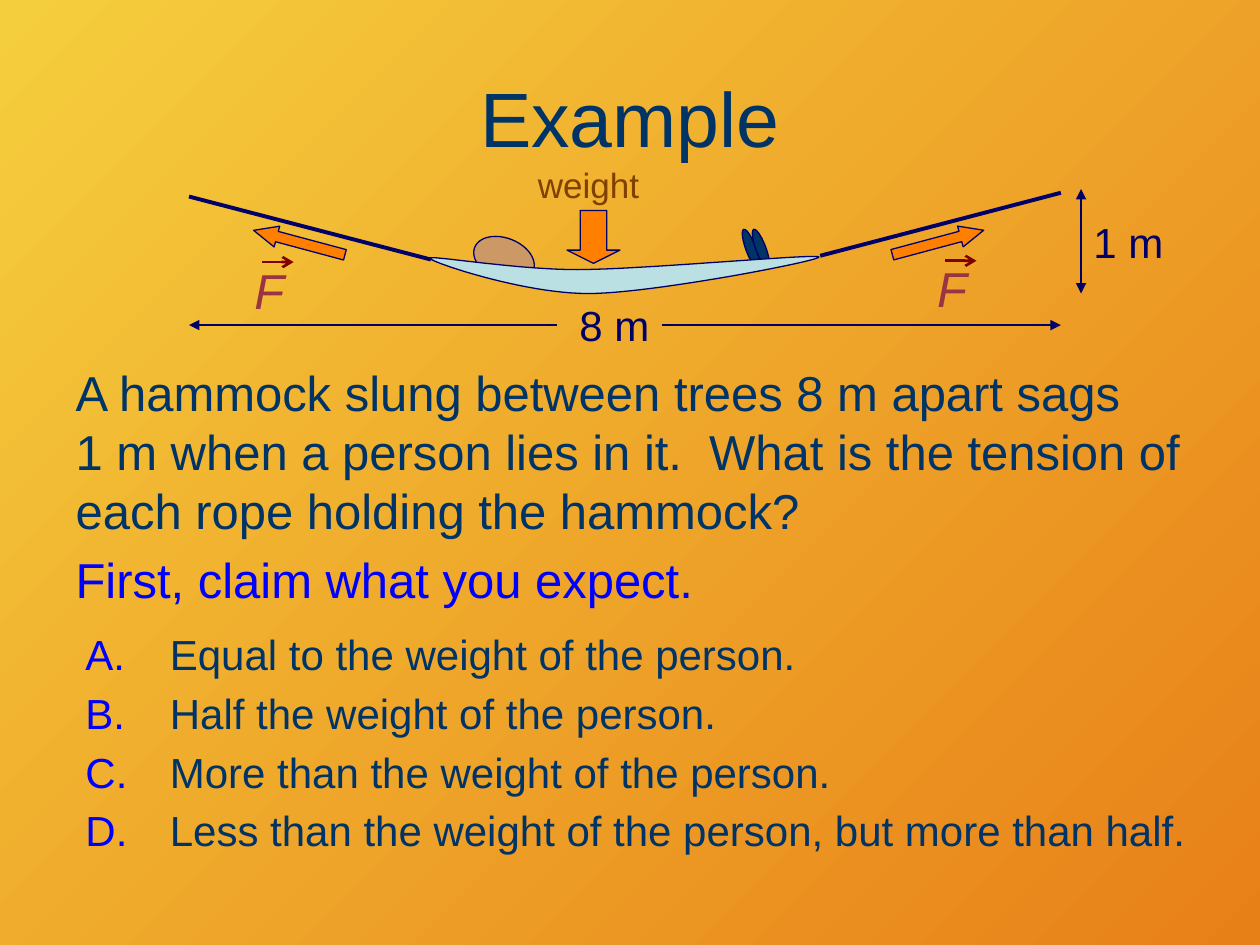
from lxml import etree
from pptx import Presentation
from pptx import util as u
from pptx.dml import color as dml
from pptx.enum import shapes, text
from pptx.oxml import ns

Inches, Pt = u.Inches, u.Pt
NO_BREAK_SPACE = chr(160)
COLORS = {
    "sun": "F5CE3D", "dusk": "E88018", "text": "003366", "prompt": "0000FF",
    "navy": "000066", "head": "CC9966", "cloth": "BBE0E3", "force": "FF8000",
    "weight": "804000", "symbol": "9A3344", "vector": "800000",
}


def rgb(name):
    return dml.RGBColor.from_string(COLORS[name])


def add_xml(parent, tag, **attributes):
    return etree.SubElement(parent, ns.qn(tag), attributes)


def bezier(start, control_1, control_2, end, steps=24):
    for step in range(1, steps + 1):
        t = step / steps
        weights = ((1 - t) ** 3, 3 * t * (1 - t) ** 2, 3 * t * t * (1 - t), t ** 3)
        points = (start, control_1, control_2, end)
        yield tuple(sum(w * p[axis] for w, p in zip(weights, points)) for axis in (0, 1))


class SlideBuilder:
    font = "Arial"
    outline = 0.75

    def __init__(self, slide):
        self.slide = slide

    def background(self, start, end):
        fill = self.slide.background.fill
        fill.gradient()
        fill.gradient_angle = 315
        for stop, name, position in zip(fill.gradient_stops, (start, end), (0, 1)):
            stop.color.rgb = rgb(name)
            stop.position = position

    def run(self, paragraph, words, size, color, italic=False):
        run = paragraph.add_run()
        run.text = words
        run.font.name = self.font
        run.font.size = Pt(size)
        run.font.italic = italic
        run.font.color.rgb = rgb(color)

    def paragraphs(self, frame, items, size):
        for index, (words, color) in enumerate(items):
            paragraph = frame.add_paragraph() if index else frame.paragraphs[0]
            self.run(paragraph, words, size, color)
            yield paragraph

    def placeholder(self, index, box, items, size, anchor, align):
        shape = self.slide.placeholders[index]
        shape.left, shape.top, shape.width, shape.height = map(Inches, box)
        frame = shape.text_frame
        frame.auto_size = text.MSO_AUTO_SIZE.NONE
        frame.vertical_anchor = anchor
        for paragraph in self.paragraphs(frame, items, size):
            paragraph.alignment = align
            properties = paragraph._p.get_or_add_pPr()
            properties.set("marL", "0")
            properties.set("indent", "0")
            add_xml(properties, "a:buNone")

    def answers(self, box, items, size):
        frame = self.slide.shapes.add_textbox(*map(Inches, box)).text_frame
        frame.word_wrap = True
        for paragraph in self.paragraphs(frame, items, size):
            paragraph.space_before = Pt(size * 0.2)
            properties = paragraph._p.get_or_add_pPr()
            properties.set("marL", str(Inches(0.67)))
            properties.set("indent", str(Inches(-0.67)))
            bullet_color = add_xml(properties, "a:buClr")
            add_xml(bullet_color, "a:srgbClr", val=COLORS["prompt"])
            add_xml(properties, "a:buAutoNum", type="alphaUcPeriod")

    def label(self, box, words, size, color, italic=False):
        frame = self.slide.shapes.add_textbox(*map(Inches, box)).text_frame
        frame.word_wrap = False
        frame.auto_size = text.MSO_AUTO_SIZE.SHAPE_TO_FIT_TEXT
        self.run(frame.paragraphs[0], words, size, color, italic)

    def paint(self, shape, fill):
        shape.shadow.inherit = False
        shape.fill.solid()
        shape.fill.fore_color.rgb = rgb(fill)
        shape.line.color.rgb = rgb("navy")
        shape.line.width = Pt(self.outline)

    def shape(self, kind, box, fill, rotation=0, adjustments=()):
        shape = self.slide.shapes.add_shape(kind, *map(Inches, box))
        shape.rotation = rotation
        for index, value in enumerate(adjustments):
            shape.adjustments[index] = value
        self.paint(shape, fill)

    def curved_shape(self, start, curves, fill):
        points = []
        current = start
        for curve in curves:
            points.extend(tuple(map(Inches, point)) for point in bezier(current, *curve))
            current = curve[-1]
        builder = self.slide.shapes.build_freeform(*map(Inches, start))
        builder.add_line_segments(points, close=True)
        self.paint(builder.convert_to_shape(), fill)

    def line(self, start, end, color="navy", width=0.75, head=None, tail=None):
        line = self.slide.shapes.add_connector(
            shapes.MSO_CONNECTOR.STRAIGHT, *map(Inches, start + end))
        line.line.color.rgb = rgb(color)
        line.line.width = Pt(width)
        for tag, kind in (("a:headEnd", head), ("a:tailEnd", tail)):
            if kind:
                add_xml(line.line._get_or_add_ln(), tag, type=kind)
        add_xml(line._element.spPr, "a:effectLst")

    def force(self, arrow_left, rotation, label_left, label_top, vector_y):
        self.shape(shapes.MSO_SHAPE.RIGHT_ARROW, (arrow_left, 1.84, 0.75, 0.17),
                   "force", rotation, (0.5, 1.125))
        self.label((label_left, label_top, 0.44, 0.57), "F", 28, "symbol", True)
        vector_left = label_left + 0.16
        self.line((vector_left, vector_y), (vector_left + 0.25, vector_y),
                  "vector", 1.5, tail="arrow")


def main():
    presentation = Presentation()
    presentation.slide_width, presentation.slide_height = Inches(10), Inches(7.5)
    slide = presentation.slides.add_slide(presentation.slide_layouts[1])
    builder = SlideBuilder(slide)
    builder.background("sun", "dusk")

    builder.placeholder(0, (0.5, 0.3, 9, 1.25), [("Example", "text")], 44,
                        text.MSO_ANCHOR.MIDDLE, text.PP_ALIGN.CENTER)
    question = (f"A hammock slung between trees 8{NO_BREAK_SPACE}m apart sags "
                f"1{NO_BREAK_SPACE}m when a person lies in it.  "
                "What is the tension of each rope holding the hammock?")
    builder.placeholder(1, (0.5, 2.83, 9, 2.02),
                        [(question, "text"), ("First, claim what you expect.", "prompt")],
                        28, text.MSO_ANCHOR.TOP, text.PP_ALIGN.LEFT)
    answers = (
        "Equal to the weight of the person.",
        "Half the weight of the person.",
        "More than the weight of the person.",
        "Less than the weight of the person, but more than half.",
    )
    builder.answers((0.58, 4.94, 9, 2), [(answer, "text") for answer in answers], 24)

    builder.line((1.5, 1.56), (3.42, 2.06), width=2.25)
    for foot_left in (5.92, 6):
        builder.shape(shapes.MSO_SHAPE.OVAL, (foot_left, 1.81, 0.08, 0.33), "text", 339.6)
    builder.shape(shapes.MSO_SHAPE.OVAL, (3.75, 1.89, 0.5, 0.33), "head", 21.4)
    builder.curved_shape((3.41, 2.05), (
        ((3.42, 2.08), (4.15, 2.33), (4.67, 2.33)),
        ((5.17, 2.33), (6.51, 2.07), (6.5, 2.04)),
        ((6.49, 2.01), (5.1, 2.14), (4.58, 2.14)),
        ((4.08, 2.14), (3.39, 2.02), (3.41, 2.05)),
    ), "cloth")
    builder.line((8.42, 1.53), (6.51, 2.03), width=2.25)

    builder.label((4.5, 2.33, 0.76, 0.5), "8 m", 24, "navy")
    builder.line((4.42, 2.58), (1.5, 2.58), tail="triangle")
    builder.line((5.25, 2.58), (8.42, 2.58), tail="triangle")
    builder.label((8.58, 1.67, 0.76, 0.5), "1 m", 24, "navy")
    builder.line((8.58, 1.5), (8.58, 2.33), head="triangle", tail="triangle")

    builder.shape(shapes.MSO_SHAPE.DOWN_ARROW, (4.5, 1.67, 0.42, 0.42), "force",
                  adjustments=(0.5, 0.25))
    builder.label((4.17, 1.25, 1.01, 0.43), "weight", 20, "weight")
    builder.force(2, 195, 1.92, 2.02, 2.08)
    builder.force(7.07, 345, 7.34, 2, 2.07)

    presentation.save("out.pptx")


if __name__ == "__main__":
    main()
